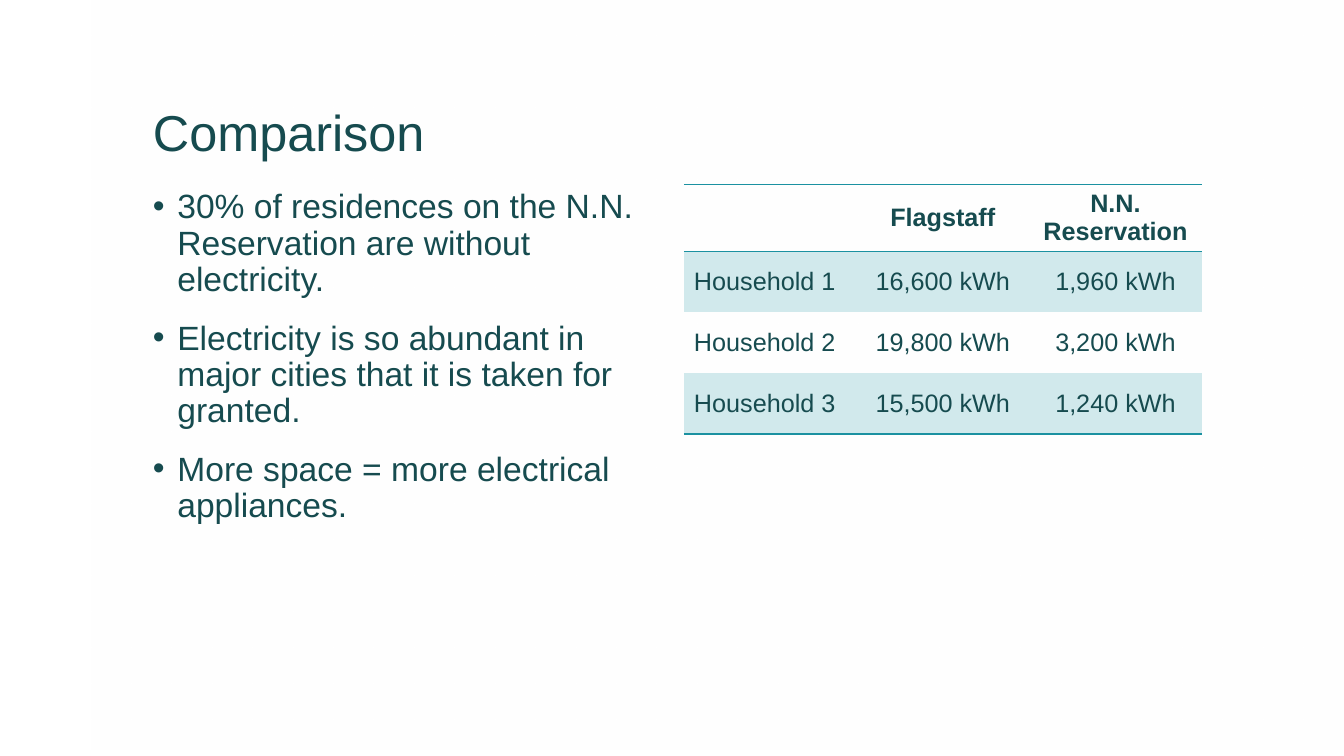
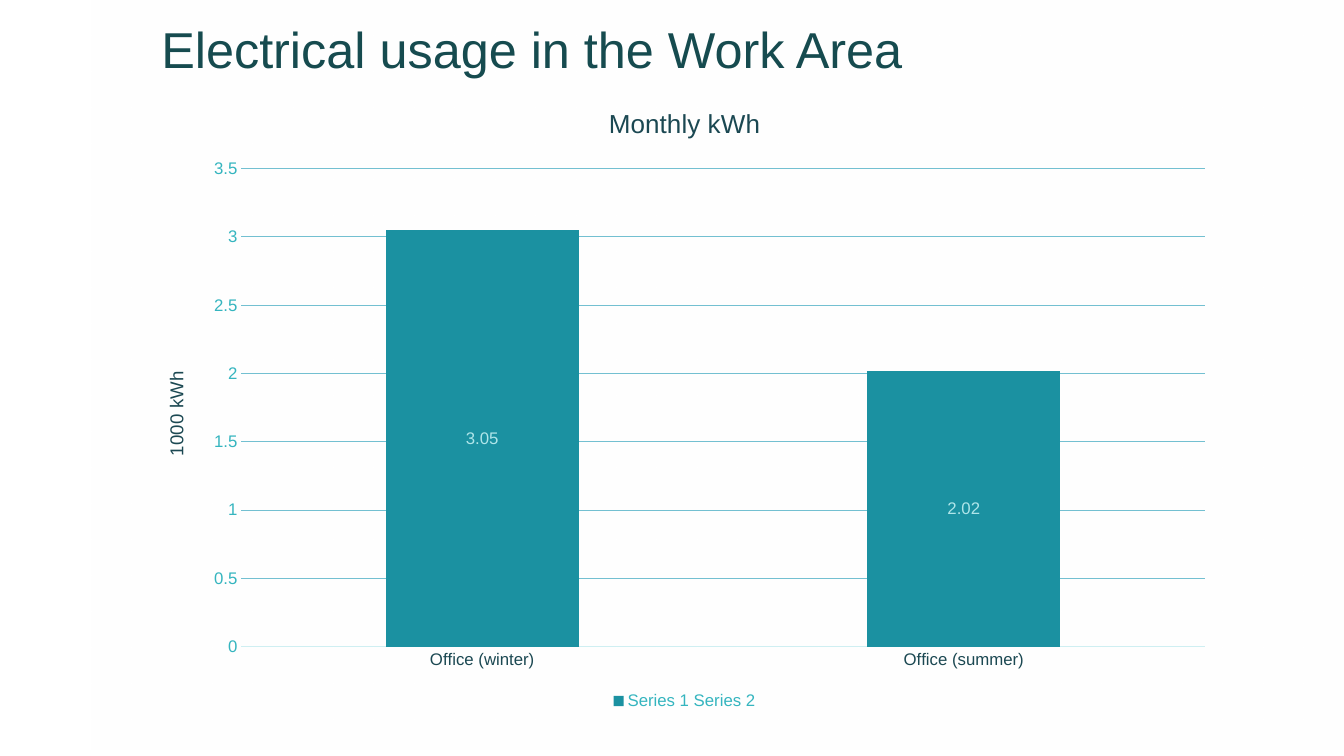
from dataclasses import dataclass

from lxml import etree
from pptx import Presentation
from pptx import util as u
from pptx.chart import data as cd
from pptx.dml.color import RGBColor
from pptx.enum import chart as ce
from pptx.enum import shapes as se
from pptx.enum import text as te
from pptx.oxml.ns import qn

Pt = u.Pt


@dataclass(frozen=True)
class Theme:
    face: str = "Arial"
    # Colours
    white: str = "FFFFFF"
    ink: str = "164B4F"
    label: str = "1B4852"
    teal: str = "1B91A1"
    tint: str = "D1E9EC"
    aqua: str = "35B5BF"
    pale: str = "AFE5E9"
    grid: str = "73C0D1"
    base: str = "CFEFF2"
    # Type sizes
    head: float = 36
    body: float = 24
    cell: float = 18
    top: float = 18.6
    side: float = 13.3
    tick: float = 12


class Deck:
    PLAIN = "{2D5ABB26-0587-4C30-8999-92F81FD0307C}"

    def __init__(self, theme):
        self.theme = theme
        self.prs = Presentation()
        self.prs.slide_width, self.prs.slide_height = Pt(960), Pt(540)
        self.slide = None

    # Shared helpers
    def paint(self, font, size, color, bold=False):
        font.name, font.size, font.bold = self.theme.face, Pt(size), bold
        font.color.rgb = RGBColor.from_string(color)

    def stroke(self, line, color):
        line.color.rgb = RGBColor.from_string(color)
        line.width = Pt(0.75)

    def place(self, shape, box):
        shape.left, shape.top, shape.width, shape.height = map(Pt, box)

    def rule(self, cell, side):
        line = etree.SubElement(cell._tc.get_or_add_tcPr(), qn("a:" + side), w=str(Pt(1)))
        fill = etree.SubElement(line, qn("a:solidFill"))
        etree.SubElement(fill, qn("a:srgbClr"), val=self.theme.teal)

    def pin(self, part, index, size, spot):
        """Fix a chart part at a spot in points, within a chart of this size."""
        for old in part.findall(qn("c:layout")):
            part.remove(old)
        layout = etree.Element(qn("c:layout"))
        part.insert(index, layout)
        manual = etree.SubElement(layout, qn("c:manualLayout"))
        modes = {"xMode": "edge", "yMode": "edge"}
        if len(spot) == 4:
            modes = {"layoutTarget": "inner", **modes}
        shares = {tag: val / full for tag, val, full in zip("xywh", spot, size * 2)}
        for tag, val in {**modes, **shares}.items():
            etree.SubElement(manual, qn("c:" + tag), val=str(val))

    # Fading white panel, moved to the master behind every slide
    def veil(self, box):
        shape = self.slide.shapes.add_shape(se.MSO_SHAPE.RECTANGLE, *map(Pt, box))
        shape.shadow.inherit = False
        shape.line.fill.background()
        shape.fill.gradient()
        shape.fill.gradient_angle = 270
        for stop, alpha in zip(shape.fill.gradient_stops, (60, 0)):
            stop.color.rgb = RGBColor.from_string(self.theme.white)
        colors = shape.element.spPr.iter(qn("a:srgbClr"))
        for color, alpha in zip(list(colors), (60, 0)):
            etree.SubElement(color, qn("a:alpha"), val=str(alpha * 1000))
        self.prs.slide_master.element.cSld.spTree.insert(2, shape.element)

    # Slide with its title
    def page(self, layout, title, box):
        self.slide = self.prs.slides.add_slide(self.prs.slide_layouts[layout])
        shape = self.slide.shapes.title
        self.place(shape, box)
        frame = shape.text_frame
        frame.text = title
        frame.auto_size = te.MSO_AUTO_SIZE.NONE
        frame.vertical_anchor = te.MSO_ANCHOR.BOTTOM
        para = frame.paragraphs[0]
        para.alignment = te.PP_ALIGN.LEFT
        para.line_spacing = 0.9
        self.paint(para.runs[0].font, self.theme.head, self.theme.ink)

    # Bulleted list
    def bullets(self, items, box):
        shape = self.slide.placeholders[1]
        self.place(shape, box)
        frame = shape.text_frame
        frame.text = "\n".join(items)
        frame.auto_size = te.MSO_AUTO_SIZE.NONE
        for i, para in enumerate(frame.paragraphs):
            props = para._p.get_or_add_pPr()
            props.set("marL", str(Pt(17.5)))
            props.set("indent", str(-Pt(17.5)))
            etree.SubElement(props, qn("a:buChar"), char="•")
            para.line_spacing = 0.9
            para.space_before = Pt(16 if i else 0)
            self.paint(para.runs[0].font, self.theme.body, self.theme.ink)

    # Table with ruled head and tinted odd rows
    def table(self, rows, box):
        frame = self.slide.shapes.add_table(len(rows), len(rows[0]), *map(Pt, box))
        for style in frame.element.iter(qn("a:tableStyleId")):
            style.text = self.PLAIN
        for r, row in enumerate(rows):
            for c, words in enumerate(row):
                cell = frame.table.cell(r, c)
                if r == 0:
                    self.rule(cell, "lnT")
                if r in (0, len(rows) - 1):
                    self.rule(cell, "lnB")
                if r % 2:
                    cell.fill.solid()
                    cell.fill.fore_color.rgb = RGBColor.from_string(self.theme.tint)
                else:
                    cell.fill.background()
                cell.vertical_anchor = te.MSO_ANCHOR.MIDDLE
                cell.text_frame.text = words
                para = cell.text_frame.paragraphs[0]
                para.alignment = te.PP_ALIGN.CENTER if c else te.PP_ALIGN.LEFT
                self.paint(para.font, self.theme.cell, self.theme.ink)
                for run in para.runs:
                    self.paint(run.font, self.theme.cell, self.theme.ink, r == 0)

    # Stacked column chart
    def chart(self, title, unit, cats, name, vals, box):
        t = self.theme
        data = cd.CategoryChartData()
        data.categories = cats
        data.add_series(name, vals)
        chart = self.slide.shapes.add_chart(
            ce.XL_CHART_TYPE.COLUMN_STACKED, *map(Pt, box), data).chart
        self.paint(chart.font, 10, t.ink)

        # Titles
        chart.has_title = True
        axis = chart.value_axis
        for holder, words, size in ((chart.chart_title, title, t.top),
                                    (axis.axis_title, unit, t.side)):
            holder.text_frame.text = words
            self.paint(holder.text_frame.paragraphs[0].runs[0].font, size, t.label)

        # Axes
        for ax, color in ((chart.category_axis, t.label), (axis, t.aqua)):
            ax.major_tick_mark = ax.minor_tick_mark = ce.XL_TICK_MARK.NONE
            self.paint(ax.tick_labels.font, t.tick, color)
        self.stroke(chart.category_axis.format.line, t.base)
        axis.format.line.fill.background()
        self.stroke(axis.major_gridlines.format.line, t.grid)
        axis.minimum_scale, axis.maximum_scale, axis.major_unit = 0, 3.5, 0.5

        # Columns and their labels
        plot = chart.plots[0]
        plot.gap_width, plot.overlap, plot.vary_by_categories = 150, 100, False
        fill = plot.series[0].format.fill
        fill.solid()
        fill.fore_color.rgb = RGBColor.from_string(t.teal)
        labels = plot.series[0].data_labels
        labels.show_value = True
        labels.position = ce.XL_LABEL_POSITION.CENTER
        self.paint(labels.font, t.tick, t.pale)

        # Legend
        chart.has_legend = True
        chart.legend.position = ce.XL_LEGEND_POSITION.BOTTOM
        chart.legend.include_in_layout = False
        self.paint(chart.legend.font, t.tick, t.aqua)

        # Layout
        size = box[2:]
        head, side = chart.element.iter(qn("c:title"))
        self.pin(head, 1, size, (329.5, 12.3))
        self.pin(side, 1, size, (13, 202.7))
        turn = next(side.iter(qn("a:bodyPr")))
        turn.set("rot", "-5400000")
        turn.set("vert", "horz")
        area = next(chart.element.iter(qn("c:plotArea")))
        self.pin(area, 0, size, (70.5, 60.5, 688, 341.5))


def main():
    deck = Deck(Theme())

    # Homes
    deck.page(1, "Comparison", (102, 30, 756, 90))
    deck.veil((65.5, 0, 894.5, 540))
    deck.bullets([
        "30% of residences on the N.N. Reservation are without electricity.",
        "Electricity is so abundant in major cities that it is taken for granted.",
        "More space = more electrical appliances.",
    ], (102, 132, 370, 354))
    deck.table([
        ("", "Flagstaff", "N.N. Reservation"),
        ("Household 1", "16,600 kWh", "1,960 kWh"),
        ("Household 2", "19,800 kWh", "3,200 kWh"),
        ("Household 3", "15,500 kWh", "1,240 kWh"),
    ], (488.5, 132, 370, 174))

    # Offices
    deck.page(5, "Electrical usage in the Work Area", (108, 0, 756, 60))
    deck.chart("Monthly kWh", "1000 kWh", ("Office (winter)", "Office (summer)"),
               "Series 1 Series 2", (3.05, 2.02), (102, 60, 774, 450))

    deck.prs.save("out.pptx")


if __name__ == "__main__":
    main()
